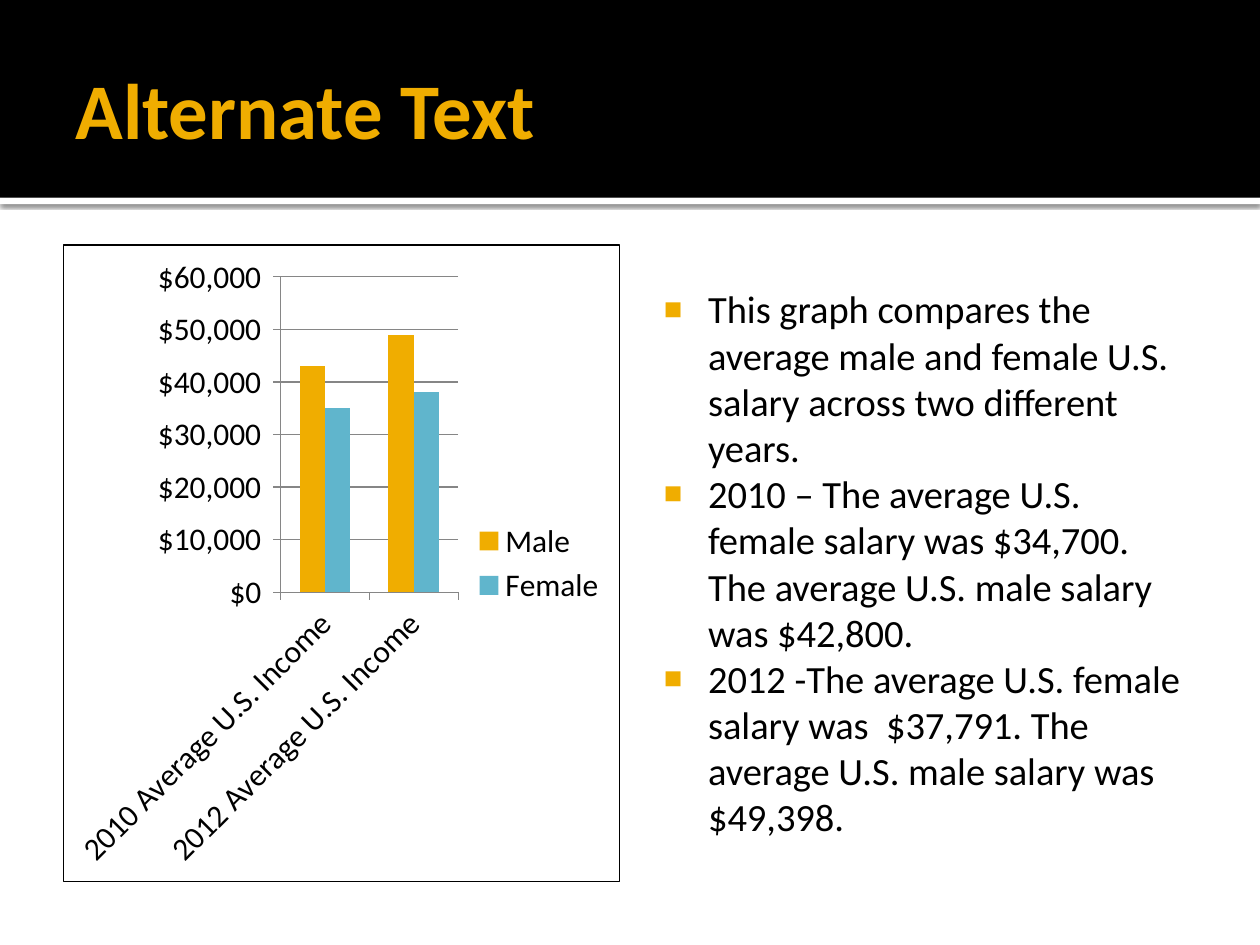
from lxml import etree
from pptx import Presentation
from pptx.chart import data
from pptx.dml.color import RGBColor
from pptx.enum import chart as ch, shapes, text
from pptx.oxml import ns, parse_xml
from pptx.util import Inches, Pt

TITLE = "Alternate Text"
POINTS = [
    "This graph compares the average male and female U.S. salary across two different years.",
    "2010 – The average U.S. female salary was $34,700. The average U.S. male salary was $42,800.",
    "2012 -The average U.S. female salary was  $37,791. The average U.S. male salary was $49,398.",
]
YEARS = ["2010 Average U.S. Income", "2012 Average U.S. Income"]
PAY = {"Male": ([43000, 49000], "gold"), "Female": ([35000, 38000], "blue")}
MONEY = '"$"#,##0_)'
THEME = {
    "font": "Calibri", "title": 45, "body": 22, "chart": 18,
    "gold": "F0AD00", "blue": "60B5CC", "black": "000000",
    "white": "FFFFFF", "grid": "868686",
}
WIDE, HIGH = 10, 7.5
EDGE, BAND, STRIP = 0.5, 1.57, 0.05
COL = 4.42
NS = ns.nsdecls("a", "c")


def hue(name):
    return RGBColor.from_string(THEME[name])


def style(font, size, color, bold=False):
    font.name, font.size, font.bold = THEME["font"], Pt(THEME[size]), bold
    font.color.rgb = hue(color)


def place(shape, *box):
    shape.left, shape.top, shape.width, shape.height = map(Inches, box)


def inset(frame, *gaps):
    """Set left, top, right and bottom margins and centre the text vertically."""
    sides = ("left", "top", "right", "bottom")
    for side, gap in zip(sides, gaps):
        setattr(frame, f"margin_{side}", Inches(gap))
    frame.vertical_anchor = text.MSO_ANCHOR.MIDDLE
    frame.auto_size = text.MSO_AUTO_SIZE.NONE
    frame.word_wrap = True


def bar(slide, top, high, color):
    """Add a full-width rectangle behind the placeholders."""
    rect = slide.shapes.add_shape(
        shapes.MSO_SHAPE.RECTANGLE, 0, Inches(top), Inches(WIDE), Inches(high))
    rect.shadow.inherit = False
    rect.fill.solid()
    rect.fill.fore_color.rgb = hue(color)
    rect.line.fill.background()
    slide.shapes._spTree.insert(2, rect._element)
    return rect


def shade(shape):
    effects = shape._element.spPr.find(ns.qn("a:effectLst"))
    effects.append(parse_xml(
        f'<a:outerShdw {NS} blurRad="{Pt(2.5)}" dist="{Pt(0.8)}" dir="5400000" '
        f'algn="t" rotWithShape="0"><a:srgbClr val="{THEME["black"]}">'
        '<a:alpha val="60000"/></a:srgbClr></a:outerShdw>'))


def bullet(para):
    para.space_before = Pt(0)
    props = para._p.get_or_add_pPr()
    props.set("marL", str(Inches(0.48)))
    props.set("indent", str(Inches(-0.35)))
    color = etree.SubElement(props, ns.qn("a:buClr"))
    etree.SubElement(color, ns.qn("a:srgbClr"), val=THEME["gold"])
    etree.SubElement(props, ns.qn("a:buSzPct"), val="80000")
    etree.SubElement(props, ns.qn("a:buFont"), typeface="Arial")
    etree.SubElement(props, ns.qn("a:buChar"), char="■")


def graph(slide):
    table = data.CategoryChartData(number_format=MONEY)
    table.categories = YEARS
    for name, (pay, _) in PAY.items():
        table.add_series(name, pay)
    box = map(Inches, (EDGE, 1.94, COL, 5.06))
    chart = slide.shapes.add_chart(
        ch.XL_CHART_TYPE.COLUMN_CLUSTERED, *box, table).chart
    style(chart.font, "chart", "black")
    chart.has_title = False
    chart.has_legend = True
    chart.legend.position = ch.XL_LEGEND_POSITION.RIGHT
    chart.legend.include_in_layout = False

    plot = chart.plots[0]
    plot.gap_width, plot.vary_by_categories = 150, False
    for series, (_, color) in zip(plot.series, PAY.values()):
        series.format.fill.solid()
        series.format.fill.fore_color.rgb = hue(color)

    cat, val = chart.category_axis, chart.value_axis
    val.minimum_scale, val.maximum_scale, val.major_unit = 0, 60000, 10000
    val.has_major_gridlines = True
    val.tick_labels.number_format = MONEY
    val.tick_labels.number_format_is_linked = False
    for axis in (cat, val):
        axis.major_tick_mark = ch.XL_TICK_MARK.OUTSIDE
        style(axis.tick_labels.font, "chart", "black")
    for part in (cat, val, val.major_gridlines):
        part.format.line.color.rgb = hue("grid")
    slant = cat._element.find(ns.qn("c:txPr")).find(ns.qn("a:bodyPr"))
    slant.set("rot", "-2700000")
    slant.set("vert", "horz")

    frame = parse_xml(
        f'<c:spPr {NS}><a:noFill/><a:ln w="{Pt(0.75)}"><a:solidFill>'
        f'<a:srgbClr val="{THEME["black"]}"/></a:solidFill></a:ln></c:spPr>')
    chart._chartSpace.find(ns.qn("c:chart")).addnext(frame)


def main():
    deck = Presentation()
    deck.slide_width, deck.slide_height = Inches(WIDE), Inches(HIGH)
    slide = deck.slides.add_slide(deck.slide_layouts[1])
    title, body = slide.placeholders

    bar(slide, 0, BAND, "black")
    shade(bar(slide, BAND, STRIP, "white"))

    place(title, EDGE, 0.17, WIDE - 2 * EDGE, 1.37)
    inset(title.text_frame, 0.1, 0.05, 0.05, 0.05)
    head = title.text_frame.paragraphs[0]
    head.alignment = text.PP_ALIGN.LEFT
    run = head.add_run()
    run.text = TITLE
    style(run.font, "title", "gold", bold=True)

    place(body, WIDE - EDGE - COL, 1.91, COL, 5.06)
    frame = body.text_frame
    inset(frame, 0.06, 0.1, 0.1, 0.05)
    for i, point in enumerate(POINTS):
        para = frame.add_paragraph() if i else frame.paragraphs[0]
        bullet(para)
        run = para.add_run()
        run.text = point
        style(run.font, "body", "black")

    graph(slide)
    deck.save("out.pptx")


if __name__ == "__main__":
    main()
